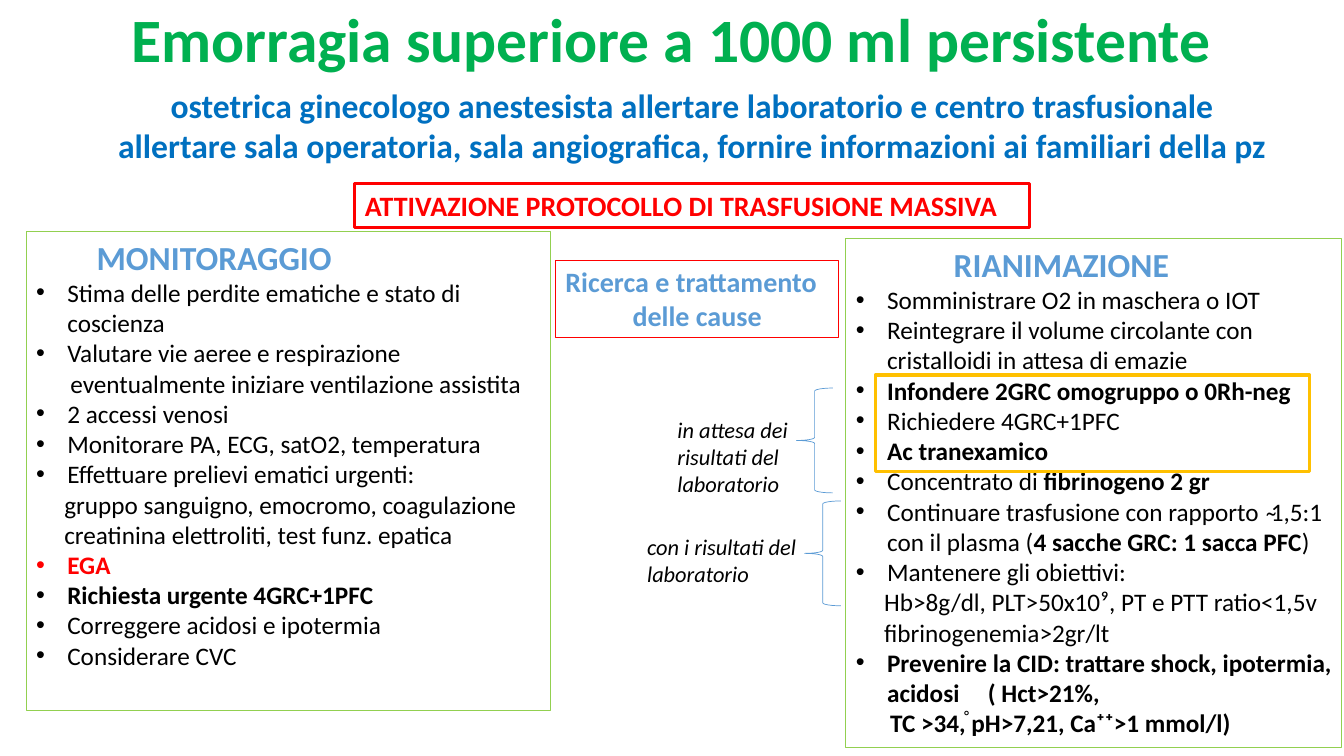
"""Builds the slide on persistent haemorrhage above 1000 ml."""
from lxml.etree import SubElement
from pptx import Presentation
from pptx.dml.color import RGBColor
from pptx.enum.shapes import MSO_SHAPE as SHAPE
from pptx.enum.text import MSO_ANCHOR as ANCHOR, PP_ALIGN as ALIGN
from pptx.oxml.ns import qn
from pptx.util import Inches, Pt

COLORS = {"title": "00B050", "team": "0070C0", "alert": "FF0000", "heading": "5B9BD5",
          "body": "000000", "panel": "92D050", "highlight": "FFC000"}
STYLES = {
    "title": dict(size=44, color="title", bold=True),
    "team": dict(size=24, color="team", bold=True),
    "protocol": dict(size=20, color="alert", bold=True),
    "causes": dict(size=20, color="heading", bold=True),
    "heading": dict(size=24, color="heading", bold=True),
    "body": dict(size=18, color="body"),
    "strong": dict(size=18, color="body", bold=True),
    "alert": dict(size=18, color="alert", bold=True),
    "note": dict(size=16, color="body", italic=True),
}
BULLET_INDENT = 0.31
HCT_TAB = 1.31

TITLE = "Emorragia superiore a 1000 ml persistente"
TEAM = ["ostetrica ginecologo anestesista allertare laboratorio e centro trasfusionale",
        "allertare sala operatoria, sala angiografica, fornire informazioni ai familiari della pz"]
PROTOCOL = "ATTIVAZIONE PROTOCOLLO DI TRASFUSIONE MASSIVA"
CAUSES = ["Ricerca e trattamento", "delle cause"]
MONITORING = [
    (0.6, [("MONITORAGGIO", "heading")]),
    ("•", [("Stima delle perdite ematiche e stato di coscienza", "body")]),
    ("•", [("Valutare vie aeree e respirazione", "body")]),
    (0.34, [("eventualmente iniziare ventilazione assistita", "body")]),
    ("•", [("2 accessi venosi", "body")]),
    ("•", [("Monitorare PA, ECG, satO2, temperatura", "body")]),
    ("•", [("Effettuare prelievi ematici urgenti:", "body")]),
    (0.28, [("gruppo sanguigno, emocromo, coagulazione", "body")]),
    (0.28, [("creatinina elettroliti, test funz. epatica", "body")]),
    ("•", [("EGA", "alert")]),
    ("•", [("Richiesta urgente 4GRC+1PFC", "strong")]),
    ("•", [("Correggere acidosi e ipotermia", "body")]),
    ("•", [("Considerare CVC", "body")]),
]
RESUSCITATION = [
    (0.97, [("RIANIMAZIONE", "heading")]),
    ("•", [("Somministrare O2 in maschera o IOT", "body")]),
    ("•", [("Reintegrare il volume circolante con cristalloidi in attesa di emazie", "body")]),
    ("•", [("Infondere 2GRC omogruppo o 0Rh-neg", "strong")]),
    ("•", [("Richiedere 4GRC+1PFC", "body")]),
    ("•", [("Ac tranexamico", "strong")]),
    ("•", [("Concentrato di ", "body"), ("fibrinogeno 2 gr", "strong")]),
    ("•", [("Continuare trasfusione con rapporto  ̴1,5:1 con il plasma (", "body"),
           ("4 sacche GRC: 1 sacca PFC", "strong"), (")", "body")]),
    ("•", [("Mantenere gli obiettivi:", "body")]),
    (0.28, [("Hb>8g/dl, PLT>50x10⁹, PT e PTT ratio<1,5v", "body")]),
    (0.28, [("fibrinogenemia>2gr/lt", "body")]),
    ("•", [("Prevenire la CID: trattare shock, ipotermia, acidosi\t( Hct>21%,", "strong")]),
    (0.34, [("TC >34֯, pH>7,21, Ca⁺⁺>1 mmol/l)", "strong")]),
]
PHASES = [
    ("in attesa dei risultati del laboratorio", (6.62, 4.08, 1.69, 0.91), (7.9, 3.85, 0.36, 1.04)),
    ("con i risultati del laboratorio", (6.32, 5.24, 1.69, 0.64), (7.98, 4.97, 0.36, 1.04)),
]

prs = Presentation()
prs.slide_width, prs.slide_height = Inches(13.33), Inches(7.5)
slide = prs.slides.add_slide(prs.slide_layouts[6])


def rgb(key):
    return RGBColor.from_string(COLORS[key])


def add_outline(area, color, weight, preset=SHAPE.RECTANGLE):
    outline = slide.shapes.add_shape(preset, *map(Inches, area))
    outline.shadow.inherit = False
    outline.fill.background()
    outline.line.color.rgb = rgb(color)
    outline.line.width = Pt(weight)
    return outline


def add_label(area):
    return slide.shapes.add_textbox(*map(Inches, area))


def set_indent(paragraph, indent):
    properties = paragraph._p.get_or_add_pPr()
    if indent == "•":
        margin = Inches(BULLET_INDENT)
        properties.set("marL", str(margin))
        properties.set("indent", str(-margin))
        SubElement(properties, qn("a:buFont"), typeface="Arial")
        SubElement(properties, qn("a:buChar"), char=indent)
    else:
        properties.set("marL", str(Inches(indent)))


def add_tab(paragraph, position):
    tabs = SubElement(paragraph._p.get_or_add_pPr(), qn("a:tabLst"))
    SubElement(tabs, qn("a:tab"), pos=str(Inches(position)), algn="l")


def write(holder, lines, anchor=ANCHOR.TOP, aligns=()):
    frame = holder.text_frame
    frame.word_wrap = True
    frame.vertical_anchor = anchor
    for index, (indent, pieces) in enumerate(lines):
        paragraph = frame.add_paragraph() if index else frame.paragraphs[0]
        paragraph.alignment = aligns[index] if aligns else ALIGN.LEFT
        set_indent(paragraph, indent)
        if any("\t" in text for text, _ in pieces):
            add_tab(paragraph, HCT_TAB)
        for text, style in pieces:
            look = STYLES[style]
            run = paragraph.add_run()
            run.text = text
            run.font.name = "Calibri"
            run.font.size = Pt(look["size"])
            run.font.color.rgb = rgb(look["color"])
            run.font.bold = look.get("bold", False)
            run.font.italic = look.get("italic", False)


def plain(texts, style):
    return [(0, [(text, style)]) for text in texts]


title = add_label((0, -0.03, 13.33, 0.91))
write(title, plain([TITLE], "title"), ANCHOR.MIDDLE, [ALIGN.CENTER])
title.text_frame.paragraphs[0].line_spacing = 0.9
write(add_label((0.22, 0.79, 13.29, 0.91)), plain(TEAM, "team"), aligns=[ALIGN.CENTER] * 2)
write(add_outline((3.52, 1.82, 6.69, 0.44), "alert", 2.25), plain([PROTOCOL], "protocol"))
write(add_outline((0.26, 2.3, 5.2, 4.75), "panel", 0.75), MONITORING)
write(add_outline((5.51, 2.58, 2.81, 0.77), "alert", 0.75), plain(CAUSES, "causes"),
      aligns=[ALIGN.LEFT, ALIGN.CENTER])
write(add_outline((8.39, 2.37, 4.92, 5.05), "panel", 0.75), RESUSCITATION)
for note, note_area, brace_area in PHASES:
    write(add_label(note_area), plain([note], "note"))
    add_outline(brace_area, "heading", 0.5, SHAPE.LEFT_BRACE)
add_outline((8.68, 3.72, 4.31, 0.96), "highlight", 2.25)

prs.save("out.pptx")
